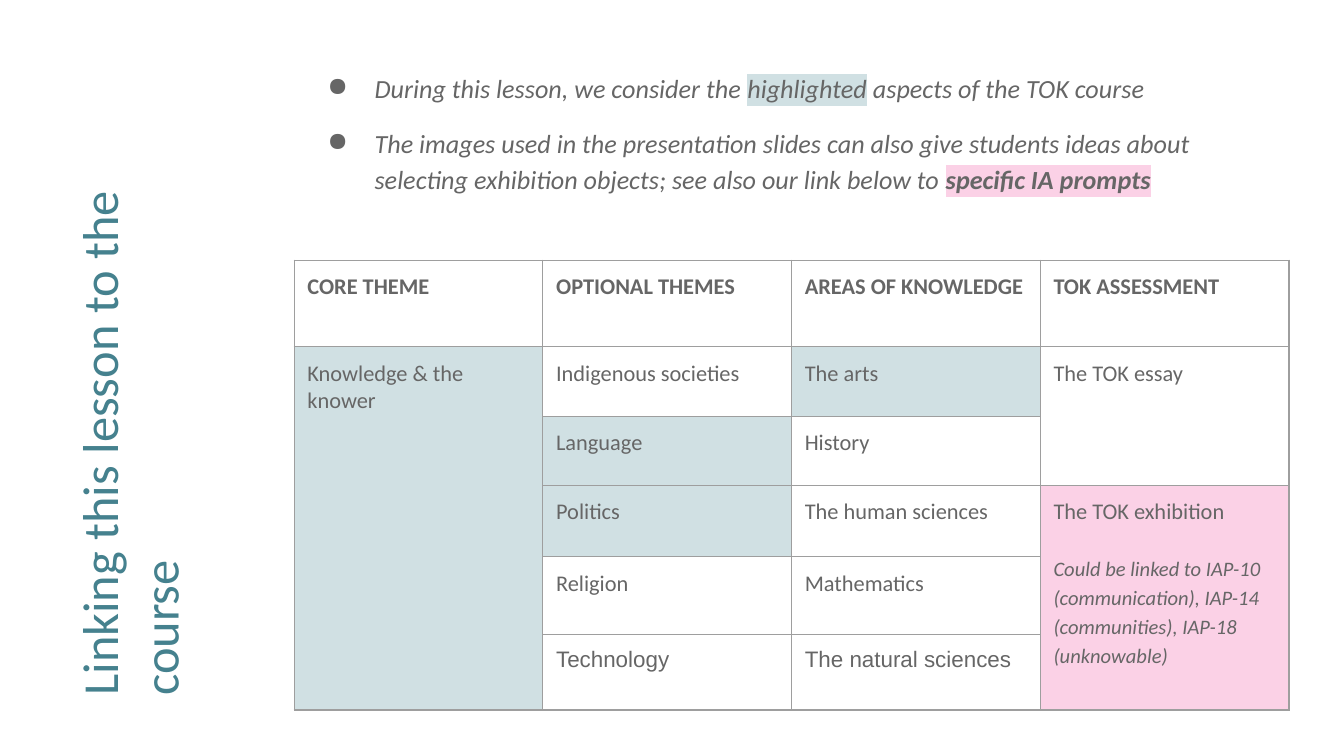
import dataclasses
import typing

import lxml.etree
import pptx
import pptx.dml.color
import pptx.oxml.ns
import pptx.util

Cm = pptx.util.Cm
Pt = pptx.util.Pt
RGBColor = pptx.dml.color.RGBColor
qn = pptx.oxml.ns.qn

TEAL = RGBColor(0x45, 0x81, 0x8E)
GREY = RGBColor(0x66, 0x66, 0x66)
RULE = RGBColor(0x9E, 0x9E, 0x9E)
WHITE = RGBColor(0xFF, 0xFF, 0xFF)
PALE_TEAL = RGBColor(0xD0, 0xE0, 0xE3)
PINK = RGBColor(0xFB, 0xD1, 0xE6)

INSET = Cm(0.25)
COLUMN_WIDTH = Cm(4.7)
ROW_HEIGHTS = [Cm(h) for h in (1.63, 1.32, 1.3, 1.35, 1.47, 1.43)]


@dataclasses.dataclass(frozen=True)
class Phrase:
    text: str
    highlight: typing.Optional[RGBColor] = None
    bold: bool = False


@dataclasses.dataclass(frozen=True)
class Topic:
    row: int
    column: int
    text: str
    fill: RGBColor = WHITE
    rows: int = 1
    face: str = "Calibri"
    note: str = ""


HEADINGS = ("CORE THEME", "OPTIONAL THEMES", "AREAS OF KNOWLEDGE", "TOK ASSESSMENT")

TOPICS = (
    Topic(1, 0, "Knowledge & the knower", PALE_TEAL, rows=5),
    Topic(1, 1, "Indigenous societies"),
    Topic(2, 1, "Language", PALE_TEAL),
    Topic(3, 1, "Politics", PALE_TEAL),
    Topic(4, 1, "Religion"),
    Topic(5, 1, "Technology", face="Arial"),
    Topic(1, 2, "The arts", PALE_TEAL),
    Topic(2, 2, "History"),
    Topic(3, 2, "The human sciences"),
    Topic(4, 2, "Mathematics"),
    Topic(5, 2, "The natural sciences", face="Arial"),
    Topic(1, 3, "The TOK essay", rows=2),
    Topic(3, 3, "The TOK exhibition", PINK, rows=3,
          note="Could be linked to IAP-10 (communication), IAP-14 (communities), "
               "IAP-18 (unknowable)"),
)

INTRODUCTION = (
    (Phrase("During this lesson, we consider the "),
     Phrase("highlighted", PALE_TEAL),
     Phrase(" aspects of the TOK course")),
    (Phrase("The images used in the presentation slides can also give students ideas "
            "about selecting exhibition objects; see also our link below to "),
     Phrase("specific IA prompts", PINK, bold=True)),
)


def set_font(paragraph, size: float, color: RGBColor = GREY, face: str = "Calibri",
             bold: bool = False, italic: bool = False) -> None:
    font = paragraph.font
    font.name, font.size, font.bold, font.italic = face, Pt(size), bold, italic
    font.color.rgb = color


def add_color(parent, tag: str, color: RGBColor):
    holder = lxml.etree.SubElement(parent, qn(tag))
    lxml.etree.SubElement(holder, qn("a:srgbClr"), val=str(color))
    return holder


def add_text_frame(slide, left: float, top: float, width: float, height: float,
                   rotation: float = 0):
    box = slide.shapes.add_textbox(Cm(left), Cm(top), Cm(width), Cm(height))
    box.rotation = rotation
    frame = box.text_frame
    frame.word_wrap = True
    frame.margin_left = frame.margin_right = INSET
    frame.margin_top = frame.margin_bottom = INSET
    return frame


def add_bullet(paragraph, phrases: typing.Sequence[Phrase]) -> None:
    properties = paragraph._p.get_or_add_pPr()
    properties.set("marL", str(Cm(1.27)))
    properties.set("indent", str(-Cm(0.89)))
    add_color(properties, "a:buClr", GREY)
    lxml.etree.SubElement(properties, qn("a:buChar"), char="●")
    paragraph.line_spacing = 1.15
    set_font(paragraph, 14, italic=True)
    for phrase in phrases:
        run = paragraph.add_run()
        run.text = phrase.text
        if phrase.bold:
            run.font.bold = True
        if phrase.highlight is not None:
            add_color(run._r.get_or_add_rPr(), "a:highlight", phrase.highlight)


def add_borders(cell) -> None:
    properties = cell._tc.get_or_add_tcPr()
    for side in ("a:lnL", "a:lnR", "a:lnT", "a:lnB"):
        line = lxml.etree.SubElement(properties, qn(side), w=str(Pt(0.75)))
        add_color(line, "a:solidFill", RULE)


def fill_topic(table, topic: Topic, bold: bool = False) -> None:
    cell = table.cell(topic.row, topic.column)
    if topic.rows > 1:
        cell.merge(table.cell(topic.row + topic.rows - 1, topic.column))
    for row in range(topic.row, topic.row + topic.rows):
        part = table.cell(row, topic.column)
        part.margin_left = part.margin_right = INSET
        part.margin_top = part.margin_bottom = INSET
        add_borders(part)
        part.fill.solid()
        part.fill.fore_color.rgb = topic.fill
    label = cell.text_frame.paragraphs[0]
    label.text = topic.text
    set_font(label, 12, face=topic.face, bold=bold)
    if topic.note:
        note = cell.text_frame.add_paragraph()
        note.text = topic.note
        note.line_spacing = 1.15
        note.space_before = Pt(14.6)
        set_font(note, 11, italic=True)


def main() -> None:
    deck = pptx.Presentation()
    deck.slide_width, deck.slide_height = Cm(25.4), Cm(14.29)
    slide = deck.slides.add_slide(deck.slide_layouts[6])

    # Vertical title
    title = add_text_frame(slide, -3.35, 5.41, 12.37, 3.61, rotation=270).paragraphs[0]
    title.text = "Linking this lesson to the course"
    set_font(title, 27, TEAL)

    # Introduction
    introduction = add_text_frame(slide, 5.56, 1.04, 18.97, 3.1)
    first, second = introduction.paragraphs[0], introduction.add_paragraph()
    second.space_before = second.space_after = Pt(10)
    for paragraph, phrases in zip((first, second), INTRODUCTION):
        add_bullet(paragraph, phrases)

    # Course overview
    overview = slide.shapes.add_table(
        len(ROW_HEIGHTS), len(HEADINGS), Cm(5.56), Cm(4.92),
        COLUMN_WIDTH * len(HEADINGS), sum(ROW_HEIGHTS)).table
    overview.first_row = overview.horz_banding = False
    for column in overview.columns:
        column.width = COLUMN_WIDTH
    for row, height in zip(overview.rows, ROW_HEIGHTS):
        row.height = height
    for index, heading in enumerate(HEADINGS):
        fill_topic(overview, Topic(0, index, heading), bold=True)
    for topic in TOPICS:
        fill_topic(overview, topic)

    deck.save("out.pptx")


if __name__ == "__main__":
    main()
